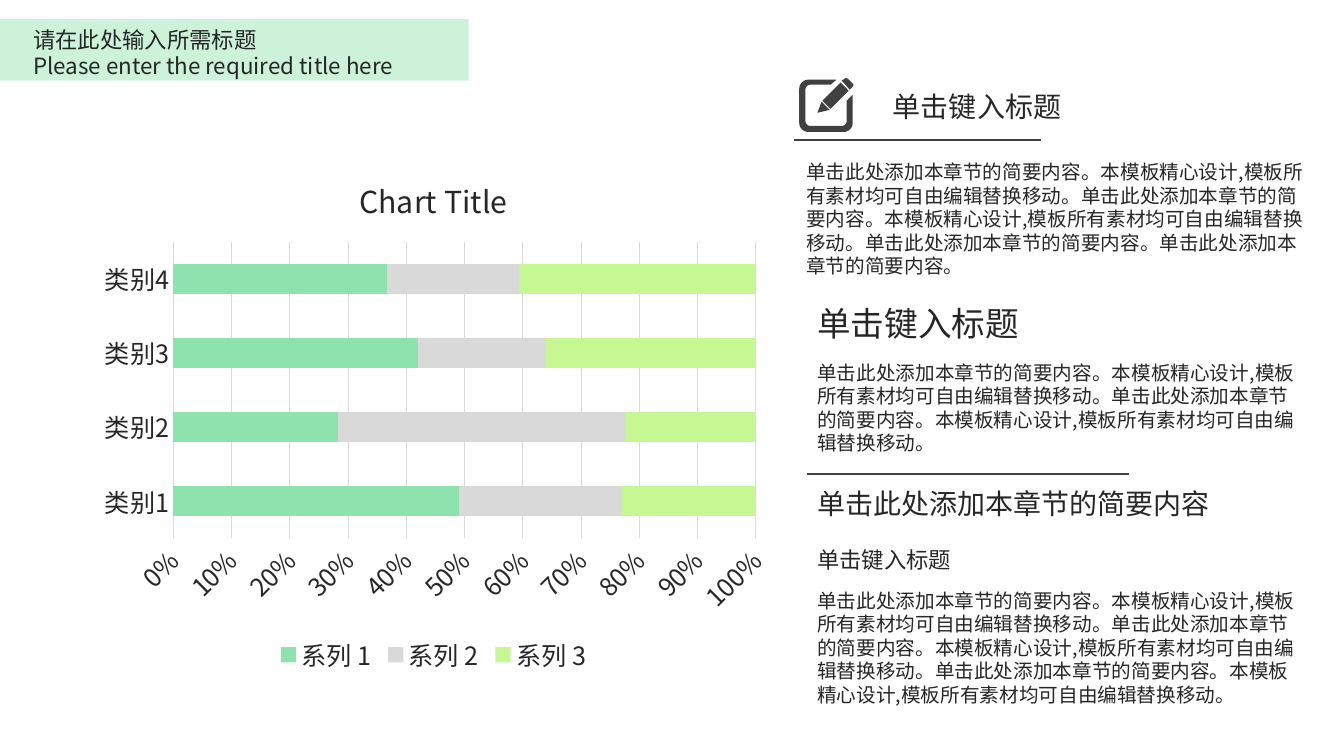
from dataclasses import dataclass
from math import cos, radians, sin

from lxml.etree import SubElement
from pptx import Presentation
from pptx.chart.data import CategoryChartData
from pptx.dml.color import RGBColor
from pptx.enum.chart import XL_CHART_TYPE as ChartType
from pptx.enum.chart import XL_LEGEND_POSITION as LegendPosition
from pptx.enum.chart import XL_TICK_MARK as TickMark
from pptx.enum.shapes import MSO_CONNECTOR as Connector
from pptx.enum.shapes import MSO_SHAPE as Shape
from pptx.enum.text import MSO_AUTO_SIZE as AutoSize
from pptx.oxml.ns import qn
from pptx.util import Pt


@dataclass(frozen=True)
class Theme:
    font: str = "Noto Sans CJK SC"
    ink: str = "262626"
    rule: str = "404040"
    grid: str = "D9D9D9"
    banner: str = "CCF2DA"
    series: tuple = ("8EE2AD", "D9D9D9", "C5F892")
    body: float = 14
    small: float = 16
    chart: float = 18
    heading: float = 20
    chart_title: float = 21.6
    large: float = 24
    heading_leading: float = 1.3
    body_leading: float = 1.2


THEME = Theme()
INTRO = "单击此处添加本章节的简要内容。"
DETAIL = "本模板精心设计,模板所有素材均可自由编辑替换移动。"
PAIR = INTRO + DETAIL
HEADING = "单击键入标题"

HEADINGS = [
    ("请在此处输入所需标题", 16.6, 13.7, 276, THEME.small),
    ("Please enter the required title here", 16.6, 32.4, 312, THEME.small),
    (HEADING, 630.7, 58.3, 157, THEME.heading),
    (HEADING, 576.7, 210.5, 190, THEME.large),
    ("单击此处添加本章节的简要内容", 576.7, 342, 353, THEME.heading),
    (HEADING, 576.7, 385.2, 157, THEME.small),
]
BODIES = [
    (PAIR * 2 + INTRO * 2, 568.8, 110.7, 370),
    (PAIR * 2, 576.7, 253.9, 357),
    (PAIR * 3, 576.7, 416.8, 357),
]
RULES = [(567.4, 100.1, 743.8), (576.7, 338.4, 806.4)]


def rgb(color):
    return RGBColor.from_string(color)


def style_font(font, size):
    for attribute, value in {"name": THEME.font, "size": Pt(size), "bold": False}.items():
        setattr(font, attribute, value)
    font.color.rgb = rgb(THEME.ink)


def add_east_asian_font(element):
    for latin in list(element.iter(qn("a:latin"))):
        east_asian = latin.makeelement(qn("a:ea"), {"typeface": THEME.font})
        latin.addnext(east_asian)


def fill_plain(shape, color):
    shape.shadow.inherit = False
    shape.fill.solid()
    shape.fill.fore_color.rgb = rgb(color)
    shape.line.fill.background()


def add_banner(slide):
    banner = slide.shapes.add_shape(Shape.RECTANGLE, Pt(-0.7), Pt(13.7), Pt(335.5), Pt(43.9))
    fill_plain(banner, THEME.banner)


def add_text(slide, wording, left, top, width, size, leading):
    height = size * leading + 7.2
    box = slide.shapes.add_textbox(Pt(left), Pt(top), Pt(width), Pt(height))
    frame = box.text_frame
    frame.word_wrap = True
    frame.auto_size = AutoSize.SHAPE_TO_FIT_TEXT
    paragraph = frame.paragraphs[0]
    paragraph.line_spacing = Pt(size * leading)
    run = paragraph.add_run()
    run.text = wording
    style_font(run.font, size)
    add_east_asian_font(box.element)


def add_rule(slide, left, top, right):
    rule = slide.shapes.add_connector(Connector.STRAIGHT, Pt(left), Pt(top), Pt(right), Pt(top))
    rule.line.color.rgb = rgb(THEME.rule)
    rule.line.width = Pt(1.25)
    SubElement(rule.element.spPr, qn("a:effectLst"))


def corner(x, y, radius, start, turn):
    angles = [radians(start + turn * step / 6) for step in range(7)]
    return [(x + radius * cos(angle), y + radius * sin(angle)) for angle in angles]


def add_edit_icon(slide):
    eraser = [(609.1, 61.9), (607, 64.1), (601.2, 57.6), (603.4, 56.2),
              (604.4, 55.6), (605.5, 56.2), (609.1, 59.8), (609.7, 60.8)]
    barrel = [(593.3, 77.8), (587.5, 72), (600.5, 59), (606.2, 64.8)]
    tip = [(592.6, 78.5), (583.9, 80.6), (586.8, 72.7)]
    sheet = [
        *corner(578.9, 64.1, 3.6, 270, -90),
        *corner(578.9, 86.4, 3.6, 180, -90),
        *corner(601.2, 86.4, 3.6, 90, -90),
        (604.8, 72), (609.1, 67.7),
        *corner(602.6, 87.8, 6.5, 0, 90),
        *corner(577.4, 87.8, 6.5, 90, 90),
        *corner(577.4, 63.4, 6.5, 180, 90),
        (597.6, 56.9), (593.3, 60.5),
    ]
    outlines = [[(Pt(x), Pt(y)) for x, y in part] for part in (eraser, barrel, tip, sheet)]
    builder = slide.shapes.build_freeform(*outlines[0][0])
    for outline in outlines:
        builder.move_to(*outline[0])
        builder.add_line_segments(outline[1:], close=True)
    fill_plain(builder.convert_to_shape(), THEME.rule)


def place_plot(chart):
    plot_area = chart.element.find(".//" + qn("c:plotArea"))
    layout = plot_area.find(qn("c:layout"))
    if layout is None:
        layout = plot_area.makeelement(qn("c:layout"), {})
        plot_area.insert(0, layout)
    manual = SubElement(layout, qn("c:manualLayout"))
    settings = {"layoutTarget": "inner", "xMode": "edge", "yMode": "edge",
                "x": "0.128", "y": "0.169", "w": "0.833", "h": "0.564"}
    for tag, value in settings.items():
        SubElement(manual, qn("c:" + tag)).set("val", value)


def style_axes(chart):
    categories, shares = chart.category_axis, chart.value_axis
    for axis in (categories, shares):
        axis.major_tick_mark = axis.minor_tick_mark = TickMark.NONE
        style_font(axis.tick_labels.font, THEME.chart)
    shares.has_major_gridlines = True
    for line in (categories.format.line, shares.major_gridlines.format.line):
        line.color.rgb = rgb(THEME.grid)
        line.width = Pt(0.75)
    shares.format.line.fill.background()
    shares.tick_labels.number_format = "0%"
    shares.tick_labels.number_format_is_linked = False
    shares.major_unit = 0.1
    label_body = chart.element.find(".//" + qn("c:valAx")).find(".//" + qn("a:bodyPr"))
    label_body.set("rot", "-2700000")
    label_body.set("vert", "horz")


def add_share_chart(slide):
    shares = CategoryChartData()
    shares.categories = [f"类别{number}" for number in range(1, 5)]
    rows = [(49, 28, 42, 37), (28, 49, 22, 23), (23, 22, 36, 41)]
    for number, values in enumerate(rows, 1):
        shares.add_series(f"系列 {number}", values)
    chart = slide.shapes.add_chart(
        ChartType.BAR_STACKED_100, Pt(59.8), Pt(109.4), Pt(499.7), Pt(375.1), shares).chart
    style_font(chart.font, THEME.chart)
    chart.has_title = True
    title = chart.chart_title.text_frame
    title.text = "Chart Title"
    style_font(title.paragraphs[0].runs[0].font, THEME.chart_title)
    chart.has_legend = True
    chart.legend.position = LegendPosition.BOTTOM
    chart.legend.include_in_layout = False
    style_font(chart.legend.font, THEME.chart)
    bars = chart.plots[0]
    for attribute, value in {"gap_width": 150, "overlap": 100, "vary_by_categories": False}.items():
        setattr(bars, attribute, value)
    for series, color in zip(bars.series, THEME.series):
        series.format.fill.solid()
        series.format.fill.fore_color.rgb = rgb(color)
    style_axes(chart)
    place_plot(chart)
    add_east_asian_font(chart.element)


def main():
    deck = Presentation()
    deck.slide_width, deck.slide_height = Pt(960), Pt(540)
    slide = deck.slides.add_slide(deck.slide_layouts[6])
    add_banner(slide)
    add_share_chart(slide)
    add_edit_icon(slide)
    for rule in RULES:
        add_rule(slide, *rule)
    for heading in HEADINGS:
        add_text(slide, *heading, THEME.heading_leading)
    for body in BODIES:
        add_text(slide, *body, THEME.body, THEME.body_leading)
    deck.save("out.pptx")


if __name__ == "__main__":
    main()
